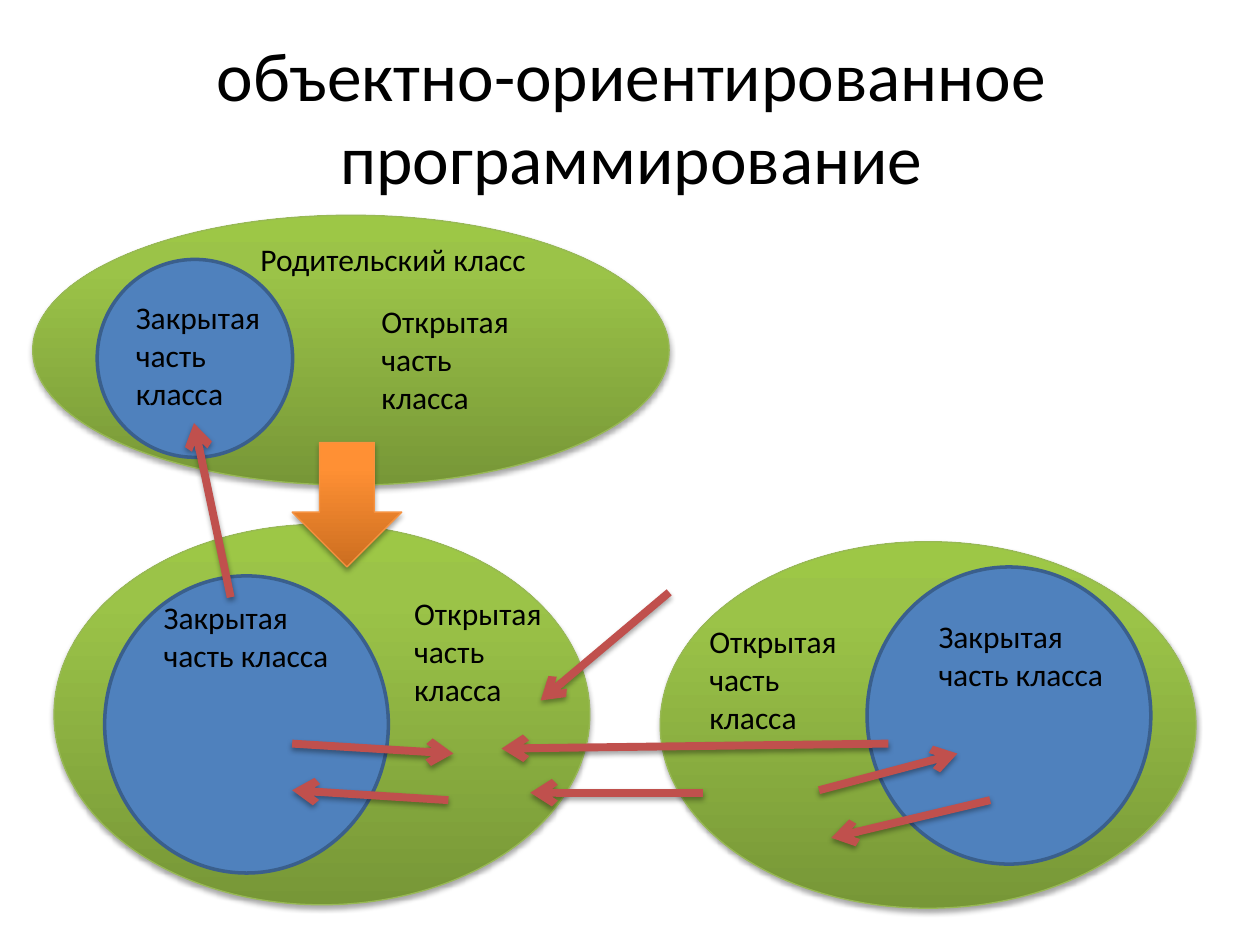
from lxml import etree
from pptx import Presentation, util as u
from pptx.dml.color import RGBColor
from pptx.enum import shapes, text
from pptx.oxml.ns import qn

GREEN = [(0, "779737"), (80, "9BC348"), (100, "9DC746")]
ORANGE = [(0, "CC6E20"), (80, "FF9034"), (100, "FF9136")]
PRIVATE = "Закрытая часть класса"
PUBLIC = "Открытая часть класса"

# Boxes in cm: outer ellipse, inner circle, private label, public label
CLASSES = [
    [(1.09, 10.57, 10.8, 7.67), (2.11, 11.61, 5.72, 5.99),
     (3.05, 11.94, 4.39, 1.8), (8.1, 11.86, 3.4, 2.57)],
    [(13.31, 10.92, 10.8, 7.39), (17.48, 11.43, 5.72, 5.99),
     (18.67, 12.32, 4.39, 1.8), (14.05, 12.42, 3.4, 2.57)],
    [(0.66, 4.34, 12.83, 5.44), (1.96, 5.23, 3.94, 3.99),
     (2.49, 5.89, 3.38, 2.57), (7.44, 5.97, 3.43, 2.57)],
]
# Start x, y and end x, y in cm
CALLS = [
    (16.51, 15.93, 19.3, 15.19),
    (9.04, 16.13, 5.89, 15.93),
    (5.89, 14.99, 9.14, 15.19),
    (4.65, 12.04, 3.91, 8.53),
    (19.96, 16.13, 16.76, 16.89),
    (14.17, 15.98, 10.69, 15.98),
    (13.49, 11.94, 10.9, 14.12),
    (17.91, 14.99, 10.11, 15.09),
]


def color(value):
    return RGBColor.from_string(value)


def cm(values):
    return [u.Cm(value) for value in values]


def add(parent, tag, **attributes):
    """Append an XML child and return it."""
    child = etree.SubElement(parent, qn(tag))
    for name, value in attributes.items():
        child.set(name, str(value))
    return child


def add_shadow(properties):
    effects = add(properties, "a:effectLst")
    shadow = add(effects, "a:outerShdw", blurRad=u.Pt(3.1), dist=u.Pt(1.8),
                 dir=5400000, rotWithShape=0)
    black = add(shadow, "a:srgbClr", val="000000")
    add(black, "a:alpha", val=35000)


class Diagram:
    font = "Calibri"
    ink = "000000"

    def __init__(self, slide):
        self.slide = slide

    def format_text(self, frame, content, size):
        frame.word_wrap = True
        frame.text = content
        font = frame.paragraphs[0].font
        font.name, font.size = self.font, u.Pt(size)
        font.color.rgb = color(self.ink)

    def title(self, content, box):
        shape = self.slide.shapes.title
        shape.left, shape.top, shape.width, shape.height = cm(box)
        frame = shape.text_frame
        self.format_text(frame, content, 39.6)
        frame.vertical_anchor = text.MSO_ANCHOR.MIDDLE
        frame.paragraphs[0].alignment = text.PP_ALIGN.CENTER

    def label(self, content, box):
        shape = self.slide.shapes.add_textbox(*cm(box))
        self.format_text(shape.text_frame, content, 18)
        shape.text_frame.auto_size = text.MSO_AUTO_SIZE.SHAPE_TO_FIT_TEXT

    def shape(self, kind, box, line, width):
        shape = self.slide.shapes.add_shape(kind, *cm(box))
        shape.line.color.rgb = color(line)
        shape.line.width = u.Pt(width)
        return shape

    def plain_circle(self, box):
        shape = self.shape(shapes.MSO_SHAPE.OVAL, box, "3A5F8C", 2)
        shape.shadow.inherit = False
        shape.fill.solid()
        shape.fill.fore_color.rgb = color("4F81BD")

    def gradient_shape(self, kind, box, stops, line):
        shape = self.shape(kind, box, line, 0.75)
        shape.fill.gradient()
        shape.fill.gradient_angle = 90
        properties = shape.element.spPr
        stop_list = properties.find(".//" + qn("a:gsLst"))
        stop_list.clear()
        for position, value in stops:
            stop = add(stop_list, "a:gs", pos=position * 1000)
            add(stop, "a:srgbClr", val=value)
        add_shadow(properties)

    def class_figure(self, outer, inner, private, public):
        self.gradient_shape(shapes.MSO_SHAPE.OVAL, outer, GREEN, "98B955")
        self.plain_circle(inner)
        self.label(PRIVATE, private)
        self.label(PUBLIC, public)

    def arrow(self, ends):
        connector = self.slide.shapes.add_connector(
            shapes.MSO_CONNECTOR.STRAIGHT, *cm(ends))
        connector.line.color.rgb = color("C0504D")
        connector.line.width = u.Pt(4.5)
        properties = connector.element.spPr
        add(properties.find(qn("a:ln")), "a:tailEnd", type="arrow")
        add_shadow(properties)


def main():
    presentation = Presentation()
    presentation.slide_width, presentation.slide_height = cm((25.4, 19.05))
    diagram = Diagram(presentation.slides.add_slide(presentation.slide_layouts[5]))
    diagram.title("объектно-ориентированное программирование",
                  (1.3, 0.74, 22.86, 3.18))
    for boxes in CLASSES:
        diagram.class_figure(*boxes)
    diagram.gradient_shape(shapes.MSO_SHAPE.DOWN_ARROW,
                           (5.89, 8.92, 2.21, 2.51), ORANGE, "F69240")
    diagram.label("Родительский класс", (5, 4.72, 5.92, 1.02))
    for ends in CALLS:
        diagram.arrow(ends)
    presentation.save("out.pptx")


if __name__ == "__main__":
    main()
